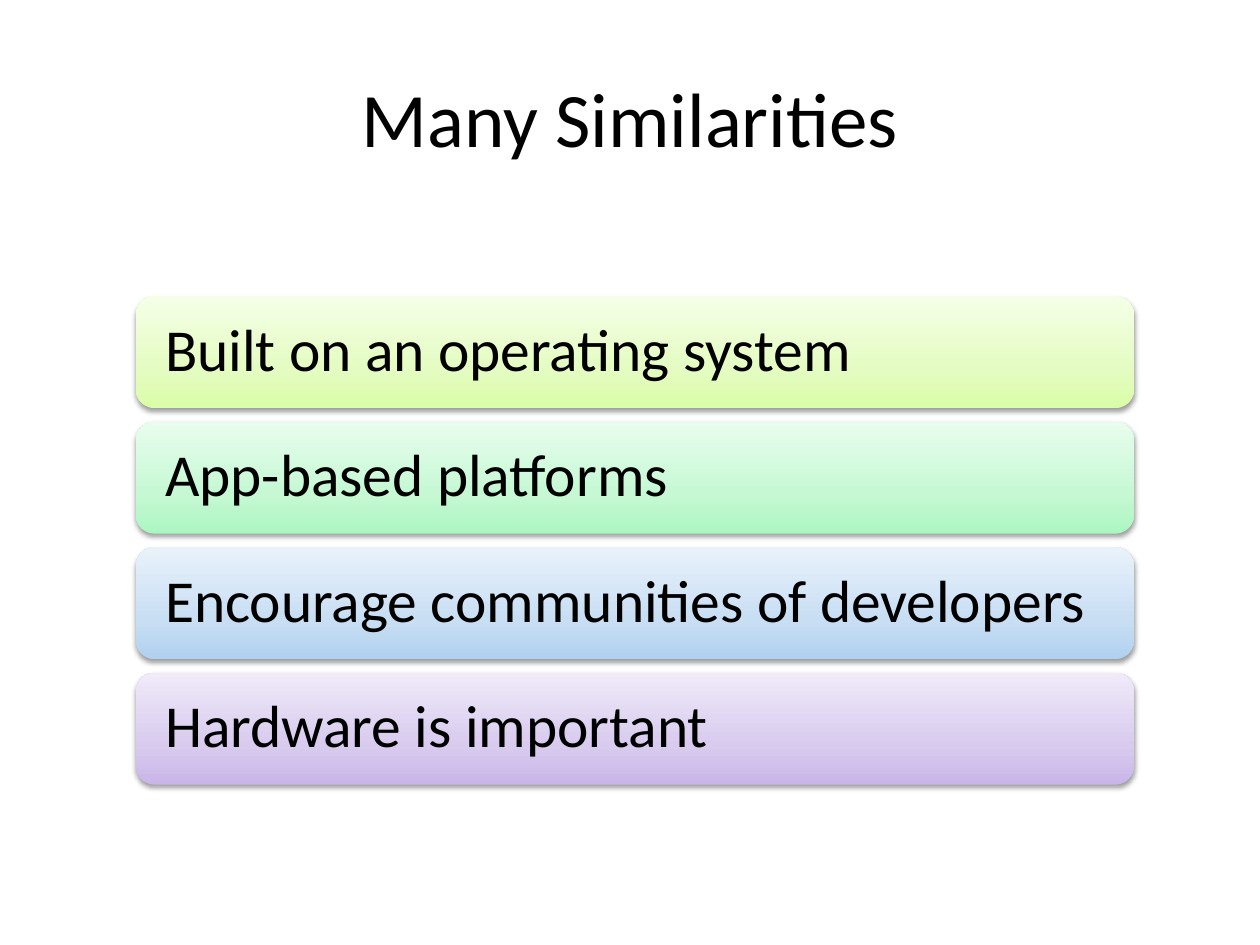
from copy import deepcopy

from lxml.etree import SubElement
from pptx import Presentation
from pptx.dml.color import RGBColor
from pptx.enum.shapes import MSO_SHAPE
from pptx.enum.text import MSO_ANCHOR, PP_ALIGN
from pptx.oxml.ns import qn
from pptx.util import Cm, Pt

FONT = "Calibri"
BLACK = RGBColor(0x00, 0x00, 0x00)
GREEN = (RGBColor(0xDA, 0xFD, 0xA7), RGBColor(0xE4, 0xFC, 0xC2), RGBColor(0xF5, 0xFF, 0xE7))
MINT = (RGBColor(0xAC, 0xF6, 0xC1), RGBColor(0xC5, 0xF8, 0xD3), RGBColor(0xE8, 0xFD, 0xEE))
BLUE = (RGBColor(0xB0, 0xD1, 0xEF), RGBColor(0xC8, 0xDE, 0xF3), RGBColor(0xE9, 0xF2, 0xFB))
PURPLE = (RGBColor(0xC9, 0xB5, 0xE8), RGBColor(0xD8, 0xCB, 0xEE), RGBColor(0xF0, 0xEA, 0xF9))
STOP_POSITIONS = (0, 0.35, 1)

SIMILARITIES = (
    ("Built on an operating system", GREEN),
    ("App-based platforms", MINT),
    ("Encourage communities of developers", BLUE),
    ("Hardware is important", PURPLE),
)
FIRST_BAR_TOP = 5.97
BAR_PITCH = 2.53


def format_text(text_frame, text, size, alignment):
    """Write one vertically centred paragraph."""
    text_frame.text = text
    text_frame.word_wrap = True
    text_frame.vertical_anchor = MSO_ANCHOR.MIDDLE
    paragraph = text_frame.paragraphs[0]
    paragraph.alignment = alignment
    paragraph.font.name = FONT
    paragraph.font.size = Pt(size)
    paragraph.font.color.rgb = BLACK
    return paragraph


def set_title(slide, text):
    """Place and format the title placeholder."""
    title = slide.shapes.title
    title.left, title.top = Cm(1.27), Cm(0.76)
    title.width, title.height = Cm(22.86), Cm(3.18)
    format_text(title.text_frame, text, 44, PP_ALIGN.CENTER)


def fill_gradient(shape, colors):
    """Fill a shape with three colours running from bottom to top."""
    shape.fill.gradient()
    shape.fill.gradient_angle = 90
    stop_list = shape.element.spPr.find(".//" + qn("a:gsLst"))
    stop_list.insert(1, deepcopy(stop_list[0]))
    for stop, position, color in zip(shape.fill.gradient_stops, STOP_POSITIONS, colors):
        stop.position = position
        stop.color.rgb = color


def add_shadow(shape):
    """Give a shape a soft shadow that falls straight down."""
    shape.shadow.inherit = False
    effects = shape.element.spPr.find(qn("a:effectLst"))
    shadow = SubElement(effects, qn("a:outerShdw"), blurRad=str(Pt(3.1)),
                        dist=str(Pt(1.6)), dir="5400000", rotWithShape="0")
    color = SubElement(shadow, qn("a:srgbClr"), val=str(BLACK))
    SubElement(color, qn("a:alpha"), val="38000")


def add_bar(slide, top, text, colors):
    """Add a rounded bar holding one similarity."""
    bar = slide.shapes.add_shape(MSO_SHAPE.ROUNDED_RECTANGLE,
                                 Cm(2.74), Cm(top), Cm(20.12), Cm(2.26))
    fill_gradient(bar, colors)
    bar.line.fill.background()
    add_shadow(bar)
    bar.text_frame.margin_left = bar.text_frame.margin_right = Cm(0.48)
    paragraph = format_text(bar.text_frame, text, 34, PP_ALIGN.LEFT)
    paragraph.line_spacing = 0.9


def main():
    """Build the slide and save it."""
    presentation = Presentation()
    presentation.slide_width, presentation.slide_height = Cm(25.4), Cm(19.05)
    slide = presentation.slides.add_slide(presentation.slide_layouts.get_by_name("Title Only"))
    set_title(slide, "Many Similarities")
    for index, (text, colors) in enumerate(SIMILARITIES):
        add_bar(slide, FIRST_BAR_TOP + index * BAR_PITCH, text, colors)
    presentation.save("out.pptx")


if __name__ == "__main__":
    main()
